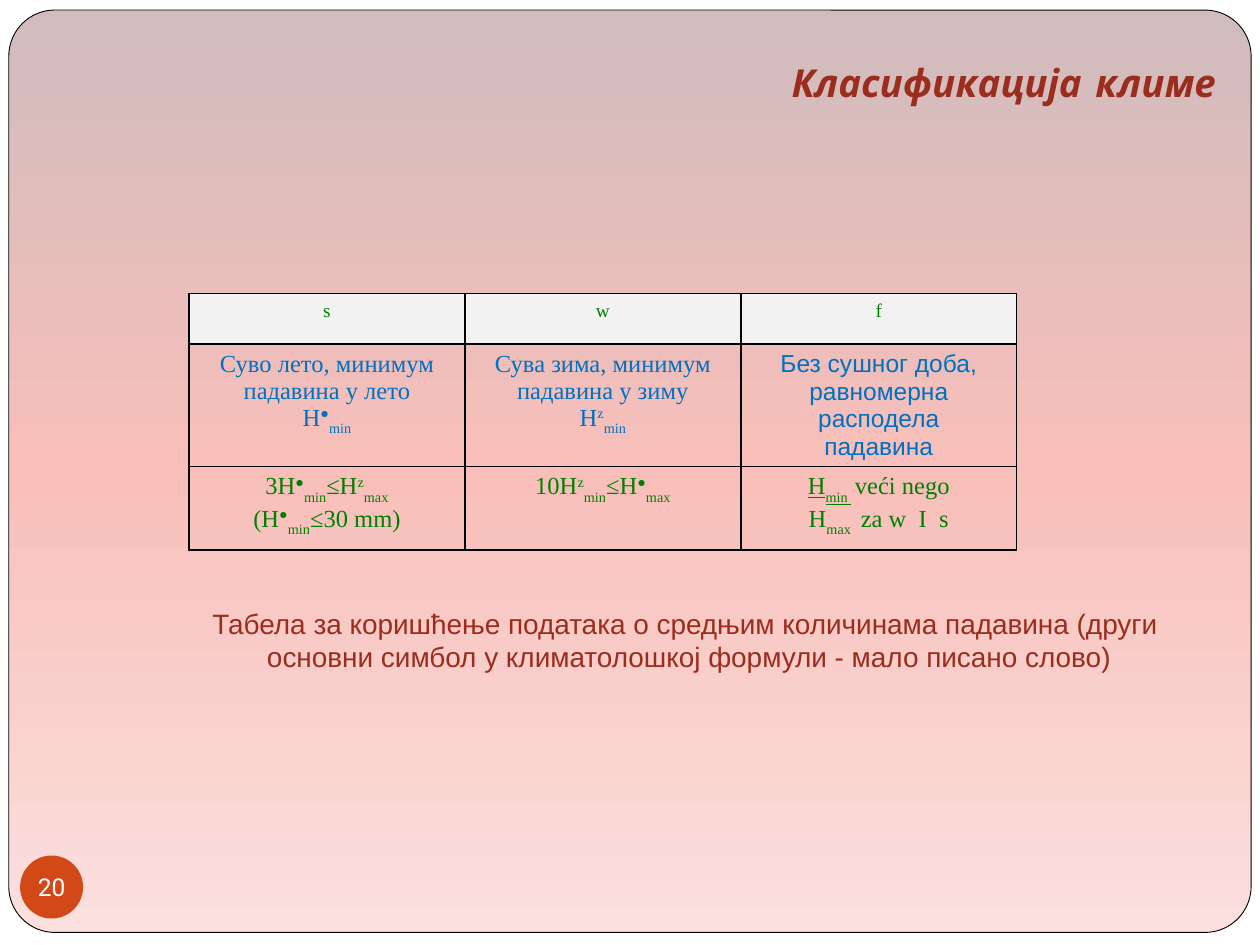
from lxml.etree import SubElement
from pptx import Presentation
from pptx.dml.color import RGBColor
from pptx.enum.shapes import MSO_SHAPE
from pptx.enum.text import MSO_ANCHOR, PP_ALIGN
from pptx.oxml.ns import qn
from pptx.util import Inches, Pt

COLORS = {
    "white": "FFFFFF", "black": "000000", "header": "F2F2F2",
    "green": "008000", "blue": "0070C0", "brick": "9B2D1F", "orange": "D34817",
}
PANEL_GRADIENT = [(0, "D0BCBC"), (50, "F8BFBA"), (100, "FBE0DE")]
SERIF, SANS = "Times New Roman", "Arial"

# Runs with a raised or lowered baseline, in percent
SUMMER, WINTER = ("●", 30), ("z", 30)
MIN, MAX = ("min", -30), ("max", -30)


def rgb(name):
    return RGBColor.from_string(COLORS[name])


def write(frame, paragraphs, *, size, color, font=SANS, align=PP_ALIGN.CENTER,
          bold=False, italic=False, before=0):
    """Fill a text frame; a run is a string or (text, baseline, underline)."""
    for index, runs in enumerate(paragraphs):
        paragraph = frame.paragraphs[0] if index == 0 else frame.add_paragraph()
        paragraph.alignment = align
        paragraph.space_before = Pt(before)
        for item in runs:
            text, baseline, underline = ((item,) if isinstance(item, str) else item) + (0, False)[
                (0 if isinstance(item, str) else len(item) - 1):]
            run = paragraph.add_run()
            run.text = text
            run.font.name, run.font.size = font, Pt(size)
            run.font.bold, run.font.italic = bold, italic
            run.font.color.rgb = rgb(color)
            if underline:
                run.font.underline = True
            if baseline:
                run.font._element.set("baseline", str(baseline * 1000))


class ClimateSlide:
    def __init__(self, presentation):
        self.slide = presentation.slides.add_slide(presentation.slide_layouts[6])
        self.slide.background.fill.solid()
        self.slide.background.fill.fore_color.rgb = rgb("white")

    def shape(self, kind, left, top, width, height):
        shape = self.slide.shapes.add_shape(
            kind, Inches(left), Inches(top), Inches(width), Inches(height))
        shape.shadow.inherit = False
        return shape

    def panel(self, left, top, width, height):
        panel = self.shape(MSO_SHAPE.ROUNDED_RECTANGLE, left, top, width, height)
        panel.adjustments[0] = 0.05
        panel.line.color.rgb = rgb("black")
        panel.line.width = Pt(0.5)
        panel.fill.gradient()
        panel.fill.gradient_angle = 270
        stops = panel._element.spPr.find(qn("a:gradFill")).find(qn("a:gsLst"))
        for stop in list(stops):
            stops.remove(stop)
        for position, color in PANEL_GRADIENT:
            stop = SubElement(stops, qn("a:gs"), pos=str(position * 1000))
            SubElement(stop, qn("a:srgbClr"), val=color)

    def badge(self, number, left, top, diameter):
        badge = self.shape(MSO_SHAPE.OVAL, left, top, diameter, diameter)
        badge.fill.solid()
        badge.fill.fore_color.rgb = rgb("orange")
        badge.line.fill.background()
        frame = badge.text_frame
        frame.margin_left = frame.margin_right = frame.margin_top = frame.margin_bottom = 0
        frame.word_wrap = False
        frame.vertical_anchor = MSO_ANCHOR.MIDDLE
        write(frame, [[number]], size=14, color="white", font="Roboto")

    def text(self, words, left, top, width, height, anchor=MSO_ANCHOR.TOP, **style):
        box = self.slide.shapes.add_textbox(
            Inches(left), Inches(top), Inches(width), Inches(height))
        box.text_frame.word_wrap = True
        box.text_frame.vertical_anchor = anchor
        write(box.text_frame, [[words]], **style)

    def table(self, rows, left, top, column_width, row_heights):
        columns = len(rows[0])
        table = self.slide.shapes.add_table(
            len(rows), columns, Inches(left), Inches(top),
            Inches(column_width * columns), Inches(sum(row_heights))).table
        table.first_row = table.horz_banding = False
        for column in table.columns:
            column.width = Inches(column_width)
        for row, height, cells in zip(table.rows, row_heights, rows):
            row.height = Inches(height)
            for cell, (paragraphs, style, fill) in zip(row.cells, cells):
                write(cell.text_frame, paragraphs, **style)
                self.borders(cell)
                if fill:
                    cell.fill.solid()
                    cell.fill.fore_color.rgb = rgb(fill)
                else:
                    cell.fill.background()

    def borders(self, cell):
        properties = cell._tc.get_or_add_tcPr()
        for side in ("a:lnL", "a:lnR", "a:lnT", "a:lnB"):
            line = SubElement(properties, qn(side), w=str(Pt(1)))
            fill = SubElement(line, qn("a:solidFill"))
            SubElement(fill, qn("a:srgbClr"), val=COLORS["black"])


def main():
    presentation = Presentation()
    presentation.slide_width, presentation.slide_height = Inches(10), Inches(7.5)
    climate = ClimateSlide(presentation)

    # Backdrop
    climate.panel(0.07, 0.08, 9.86, 7.32)

    # Precipitation table: symbol, meaning, condition
    symbol = dict(size=11, color="green", font=SERIF)
    meaning = dict(size=14, color="blue", font=SERIF)
    condition = dict(size=14, color="green", font=SERIF)
    symbols = [([[letter]], symbol, "header") for letter in "swf"]
    meanings = [
        ([["Суво лето, минимум"], ["падавина у лето"], ["H", SUMMER, MIN]], meaning, None),
        ([["Сува зима, минимум"], ["падавина у зиму"], ["H", WINTER, MIN]], meaning, None),
        ([["Без сушног доба,"], ["равномерна расподела"], ["падавина"]],
         {**meaning, "font": SANS}, None),
    ]
    conditions = [
        ([["3H", SUMMER, MIN, "≤H", WINTER, MAX], ["(H", SUMMER, MIN, "≤30 mm)"]],
         condition, None),
        ([["10H", WINTER, MIN, "≤H", SUMMER, MAX]], condition, None),
        ([[("H", 0, True), ("min ", -30, True), (" ", -30), "veći nego"],
          ["H", ("max ", -30), " za w  I  s"]], condition, None),
    ]
    climate.table([symbols, meanings, conditions], 1.5, 2.33, 2.19, [0.4, 0.91, 0.66])

    # Caption, slide number and title
    climate.text("Табела за коришћење података о средњим количинама падавина (други  "
                 "основни симбол у климатолошкој формули - мало писано слово)",
                 1.25, 4.76, 8.44, 0.64, anchor=MSO_ANCHOR.MIDDLE, size=16, color="brick")
    climate.badge("20", 0.16, 6.79, 0.5)
    climate.text("Класификација климе", 0.5, 0.42, 9.25, 0.42, size=22, color="brick",
                 font="Comic Neue", align=PP_ALIGN.RIGHT, bold=True, italic=True, before=4.4)

    presentation.save("out.pptx")


if __name__ == "__main__":
    main()
